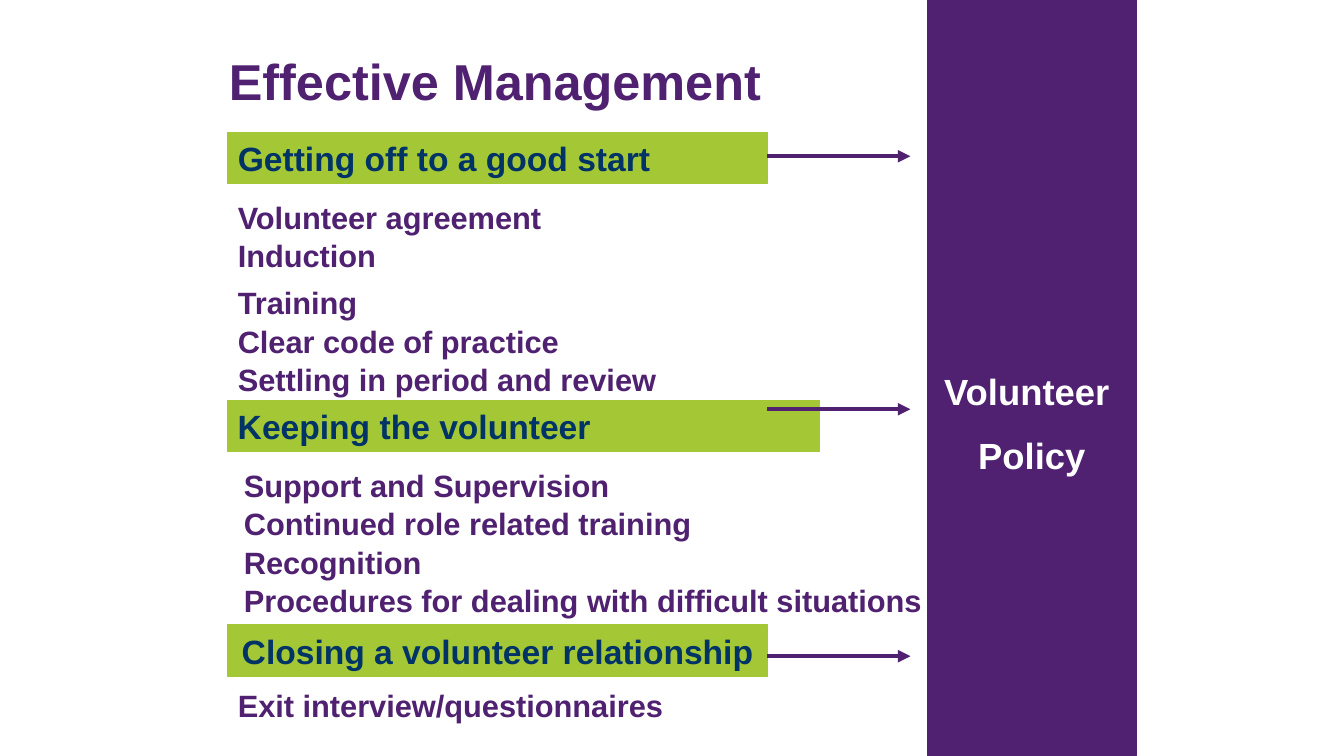
from dataclasses import dataclass

from lxml import etree
from pptx import Presentation
from pptx.dml.color import RGBColor
from pptx.enum.shapes import MSO_CONNECTOR, MSO_SHAPE
from pptx.enum.text import MSO_ANCHOR, MSO_AUTO_SIZE, PP_ALIGN
from pptx.oxml.ns import qn
from pptx.util import Inches, Pt

LEFT, CENTER = PP_ALIGN.LEFT, PP_ALIGN.CENTER
TOP, MIDDLE, BOTTOM = MSO_ANCHOR.TOP, MSO_ANCHOR.MIDDLE, MSO_ANCHOR.BOTTOM
NO_AUTOFIT = MSO_AUTO_SIZE.NONE
RECTANGLE = MSO_SHAPE.RECTANGLE
STRAIGHT = MSO_CONNECTOR.STRAIGHT
TITLE_ONLY = 5


@dataclass(frozen=True)
class Theme:
    font: str = "Arial"
    purple: RGBColor = RGBColor(0x4F, 0x21, 0x70)
    green: RGBColor = RGBColor(0xA4, 0xC7, 0x36)
    navy: RGBColor = RGBColor(0x00, 0x33, 0x66)
    white: RGBColor = RGBColor(0xFF, 0xFF, 0xFF)
    title_size: float = 36
    band_size: float = 26
    heading_size: float = 24
    item_size: float = 22
    item_gap: float = 1.1
    group_gap: float = 7.1
    arrow_width: float = 3


@dataclass(frozen=True)
class Section:
    heading: str
    bar_row: float
    bar_columns: float
    align: PP_ALIGN
    list_column: float
    list_row: float
    groups: tuple
    arrow_row: float


BAR_COLUMN, BAR_ROWS = 22.6, 5.1
LIST_COLUMNS = 69.5
ARROW_START, ARROW_END = 76.1, 90.3
BAND_COLUMN, BAND_COLUMNS, BAND_TEXT_ROW = 92, 20.7, 36.6

SECTIONS = (
    Section("Getting off to a good start", 13.1, 53.5, LEFT, 22.6, 19.2,
            (("Volunteer agreement", "Induction"),
             ("Training", "Clear code of practice", "Settling in period and review")),
            15.5),
    Section("Keeping the volunteer", 39.7, 58.7, LEFT, 23.2, 45.8,
            (("Support and Supervision", "Continued role related training",
              "Recognition", "Procedures for dealing with difficult situations"),),
            40.6),
    Section("Closing a volunteer relationship", 62, 53.5, CENTER, 22.6, 67.6,
            (("Exit interview/questionnaires",),),
            65.1),
)


class SlideBuilder:
    """Draws on one slide; lengths are columns and rows of a tenth of an inch."""

    def __init__(self, deck, theme):
        self.theme = theme
        self.page = deck.slides.add_slide(deck.slide_layouts[TITLE_ONLY])

    def grid(self, *cells):
        return [Inches(cell / 10) for cell in cells]

    def add_lines(self, box, lines, size, color, align=LEFT, anchor=TOP):
        """Fill a shape with (text, space before) lines."""
        frame = box.text_frame
        frame.word_wrap = True
        frame.auto_size = NO_AUTOFIT
        frame.vertical_anchor = anchor
        for index, (text, gap) in enumerate(lines):
            para = frame.add_paragraph() if index else frame.paragraphs[0]
            para.alignment = align
            para.space_before = Pt(gap)
            span = para.add_run()
            span.text = text
            span.font.name = self.theme.font
            span.font.size = Pt(size)
            span.font.bold = True
            span.font.color.rgb = color

    def title(self, text, *cells):
        box = self.page.shapes.title
        box.left, box.top, box.width, box.height = self.grid(*cells)
        self.add_lines(box, [(text, 0)], self.theme.title_size,
                       self.theme.purple, anchor=BOTTOM)
        box.text_frame.paragraphs[0].line_spacing = 0.9

    def block(self, color, *cells):
        box = self.page.shapes.add_shape(RECTANGLE, *self.grid(*cells))
        box.shadow.inherit = False
        box.fill.solid()
        box.fill.fore_color.rgb = color
        box.line.color.rgb = color
        box.line.width = Pt(0.75)
        return box

    def heading_bar(self, section):
        bar = self.block(self.theme.green, BAR_COLUMN, section.bar_row,
                         section.bar_columns, BAR_ROWS)
        self.add_lines(bar, [(section.heading, 0)], self.theme.heading_size,
                       self.theme.navy, section.align, MIDDLE)

    def item_list(self, section):
        lines = []
        for group in section.groups:
            for index, text in enumerate(group):
                gap = self.theme.item_gap if index else self.theme.group_gap
                lines.append((text, gap if lines else 0))
        rows = 1 + 3.7 * len(lines)
        box = self.page.shapes.add_textbox(
            *self.grid(section.list_column, section.list_row, LIST_COLUMNS, rows))
        self.add_lines(box, lines, self.theme.item_size, self.theme.purple)

    def band(self, lines):
        band = self.block(self.theme.purple, BAND_COLUMN, 0, BAND_COLUMNS, 75)
        band.text_frame.margin_top = self.grid(BAND_TEXT_ROW)[0]
        self.add_lines(band, lines, self.theme.band_size, self.theme.white, CENTER)

    def arrow(self, row):
        arrow = self.page.shapes.add_connector(
            STRAIGHT, *self.grid(ARROW_START, row, ARROW_END, row))
        arrow.line.color.rgb = self.theme.purple
        arrow.line.width = Pt(self.theme.arrow_width)
        properties = arrow._element.spPr
        etree.SubElement(properties.find(qn("a:ln")), qn("a:tailEnd"), type="triangle")
        etree.SubElement(properties, qn("a:effectLst"))


def main():
    deck = Presentation()
    deck.slide_width, deck.slide_height = Inches(13.33), Inches(7.5)
    slide = SlideBuilder(deck, Theme())
    slide.title("Effective Management", 21.7, 6, 69, 5.6)
    slide.band([("Volunteer ", 0), ("Policy", 14.9)])
    for section in SECTIONS:
        slide.heading_bar(section)
        slide.item_list(section)
        slide.arrow(section.arrow_row)
    deck.save("out.pptx")


if __name__ == "__main__":
    main()
